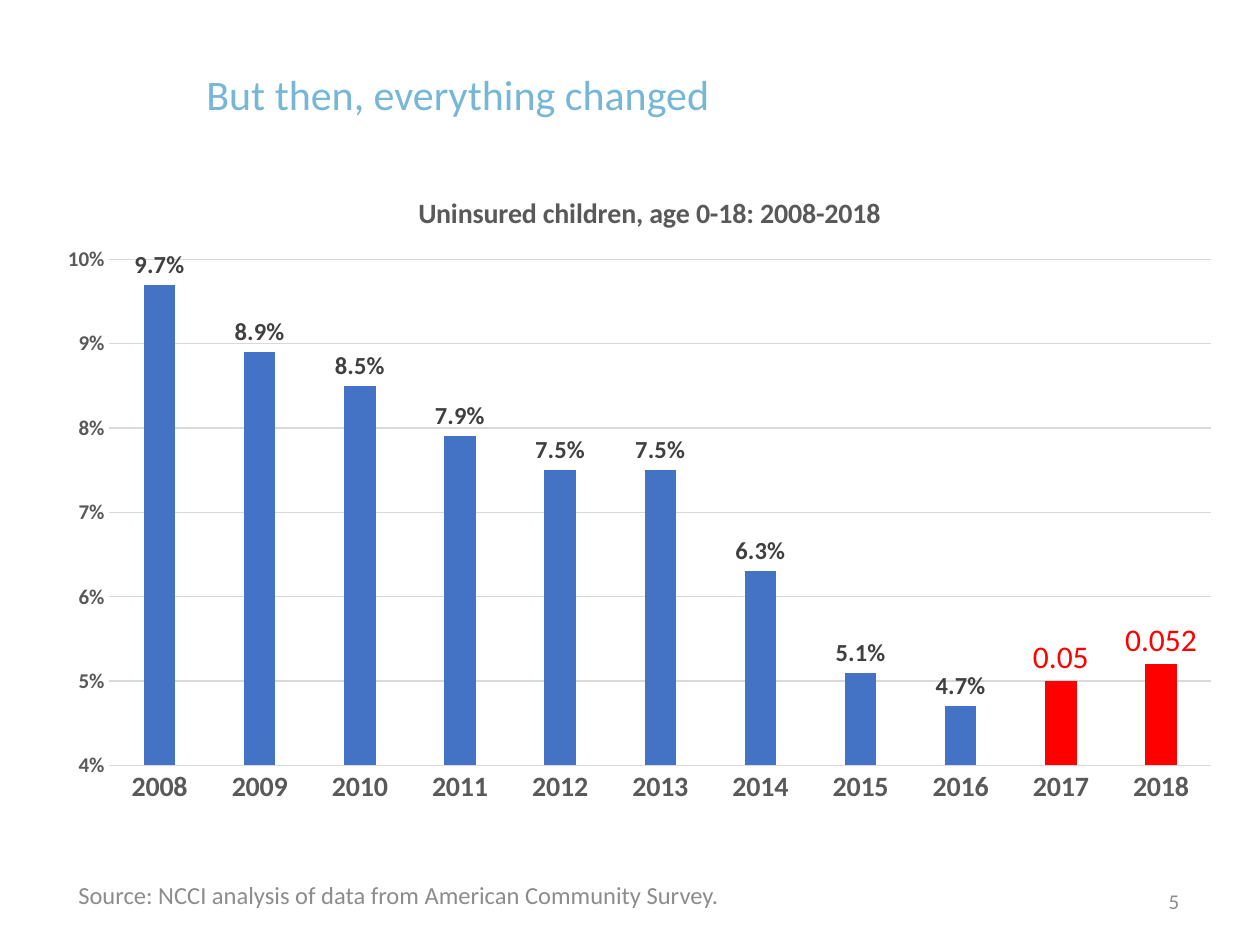
import dataclasses

import lxml.etree
import pptx
import pptx.chart.data
import pptx.dml.color
import pptx.enum.chart
import pptx.enum.text
import pptx.oxml.ns
import pptx.util

EMU_PER_PX = 914400 // 126
FONT = "Calibri"
GREY, GRID, BLUE, RED = "595959", "D9D9D9", "4472C4", "FF0000"
RATES = {
    "2008": 0.097, "2009": 0.089, "2010": 0.085, "2011": 0.079,
    "2012": 0.075, "2013": 0.075, "2014": 0.063, "2015": 0.051,
    "2016": 0.047, "2017": 0.05, "2018": 0.052,
}
RISING_YEARS = ("2017", "2018")


@dataclasses.dataclass
class Label:
    text: str
    box: tuple[int, int, int, int]
    size: int
    color: str
    centered: bool = False


LABELS = [
    Label("But then, everything changed", (194, 33, 1000, 121), 24, "76B6D7"),
    Label("5", (1138, 876, 72, 50), 12, "8C8C8C", True),
    Label("Source: NCCI analysis of data from American Community Survey.",
          (66, 864, 1061, 62), 14, "8C8C8C"),
]


def px(*lengths: int) -> list[int]:
    return [pptx.util.Emu(n * EMU_PER_PX) for n in lengths]


def rgb(color: str) -> pptx.dml.color.RGBColor:
    return pptx.dml.color.RGBColor.from_string(color)


def set_font(font, size: int, color: str, bold: bool = False) -> None:
    font.name = FONT
    font.size = pptx.util.Pt(size)
    font.bold = bold
    font.color.rgb = rgb(color)


def set_fill(fill, color: str) -> None:
    fill.solid()
    fill.fore_color.rgb = rgb(color)


def set_line(line, color: str) -> None:
    line.color.rgb = rgb(color)
    line.width = pptx.util.Pt(0.75)


def add_label(slide, label: Label) -> None:
    tf = slide.shapes.add_textbox(*px(*label.box)).text_frame
    tf.word_wrap = True
    tf.vertical_anchor = pptx.enum.text.MSO_ANCHOR.MIDDLE
    p = tf.paragraphs[0]
    p.text = label.text
    if label.centered:
        p.alignment = pptx.enum.text.PP_ALIGN.CENTER
    set_font(p.font, label.size, label.color)


def set_layout(parent, index: int, **values: str | float) -> None:
    qn = pptx.oxml.ns.qn
    for old in parent.findall(qn("c:layout")):
        parent.remove(old)
    layout = lxml.etree.Element(qn("c:layout"))
    manual = lxml.etree.SubElement(layout, qn("c:manualLayout"))
    for name, value in values.items():
        lxml.etree.SubElement(manual, qn(f"c:{name}")).set("val", str(value))
    parent.insert(index, layout)


def add_rate_chart(slide) -> None:
    data = pptx.chart.data.CategoryChartData(number_format="0.0%")
    data.categories = list(RATES)
    data.add_series("Series 1", list(RATES.values()))
    chart = slide.shapes.add_chart(
        pptx.enum.chart.XL_CHART_TYPE.COLUMN_CLUSTERED,
        *px(44, 163, 1191, 655), data).chart
    set_font(chart.font, 10, "000000")
    chart.has_legend = False

    p = chart.chart_title.text_frame.paragraphs[0]
    p.text = "Uninsured children, age 0-18: 2008-2018"
    set_font(p.font, 16, GREY, True)
    chart.chart_title.include_in_layout = False
    set_layout(chart.chart_title._element, 1,
               xMode="edge", yMode="edge", x=0.31, y=0.04)
    set_layout(chart._chartSpace.chart.plotArea, 0, layoutTarget="inner",
               xMode="edge", yMode="edge", x=0.055, y=0.147, w=0.925, h=0.773)

    none = pptx.enum.chart.XL_TICK_MARK.NONE
    for axis, size in ((chart.category_axis, 16), (chart.value_axis, 12)):
        axis.major_tick_mark = axis.minor_tick_mark = none
        set_font(axis.tick_labels.font, size, GREY, True)
    set_line(chart.category_axis.format.line, GRID)
    rate_axis = chart.value_axis
    rate_axis.minimum_scale, rate_axis.maximum_scale = 0.04, 0.1
    rate_axis.major_unit = 0.01
    rate_axis.tick_labels.number_format = "0%"
    rate_axis.tick_labels.number_format_is_linked = False
    rate_axis.format.line.fill.background()
    set_line(rate_axis.major_gridlines.format.line, GRID)

    plot = chart.plots[0]
    plot.vary_by_categories = False
    plot.gap_width, plot.overlap = 219, -27
    series = plot.series[0]
    set_fill(series.format.fill, BLUE)
    outside = pptx.enum.chart.XL_LABEL_POSITION.OUTSIDE_END
    labels = series.data_labels
    labels.show_value = True
    labels.number_format = "0.0%"
    labels.number_format_is_linked = False
    labels.position = outside
    set_font(labels.font, 14, "404040", True)

    years = list(RATES)
    for year in RISING_YEARS:
        point = series.points[years.index(year)]
        set_fill(point.format.fill, RED)
        p = point.data_label.text_frame.paragraphs[0]
        r = p.add_run()
        r.text = str(RATES[year])
        set_font(r.font, 18, RED)
        point.data_label.position = outside


def main() -> None:
    prs = pptx.Presentation()
    prs.slide_width, prs.slide_height = px(1260, 945)
    slide = prs.slides.add_slide(prs.slide_layouts[6])
    add_rate_chart(slide)
    for label in LABELS:
        add_label(slide, label)
    prs.save("out.pptx")


if __name__ == "__main__":
    main()
